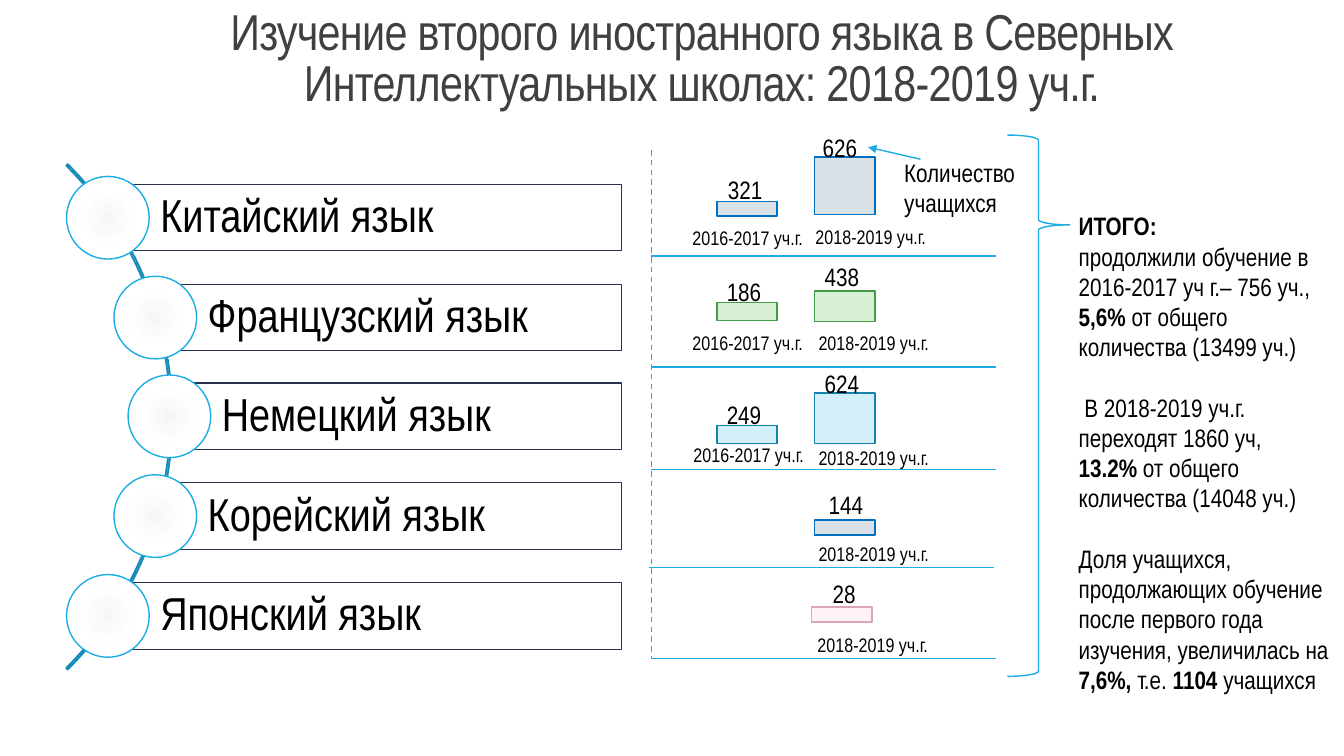
import pptx
import pptx.util
import pptx.oxml
import pptx.dml.color
import pptx.enum.dml
import pptx.enum.shapes
import pptx.enum.text
from dataclasses import dataclass

# Content
TITLE = ("Изучение второго иностранного языка в Северных "
         "Интеллектуальных школах: 2018-2019 уч.г.")
NOTE = "Количество учащихся"
OLD, NEW = "2016-2017 уч.г.", "2018-2019 уч.г."

# Language, circle left
LANGS = [("Китайский язык", 66), ("Французский язык", 113),
         ("Немецкий язык", 127), ("Корейский язык", 113),
         ("Японский язык", 66)]

# Tint, then bars: value, bar (left, top, height), value spot, year, year spot
BARS = [
    ("blue", [("321", (711, 200, 14), (712, 168), OLD, (677, 219)),
              ("626", (808, 156, 57), (806, 126), NEW, (799, 218))]),
    ("green", [("186", (711, 300, 18), (711, 269), OLD, (677, 323)),
               ("438", (808, 289, 30), (808, 254), NEW, (802, 323))]),
    ("sky", [("249", (711, 422, 18), (711, 391), OLD, (678, 434)),
             ("624", (808, 390, 50), (808, 361), NEW, (802, 437))]),
    ("blue", [("144", (808, 516, 15), (812, 481), NEW, (802, 533))]),
    ("pink", [("28", (805, 602, 15), (816, 569), NEW, (801, 623))]),
]

# Left and y of the row rules
RULES = [(646, 254), (646, 364), (646, 466), (644, 563), (646, 653)]

# Paragraphs: gap before in points, then (text, bold) runs
TOTAL = [
    (0, [("ИТОГО:", True)]),
    (0, [("продолжили обучение в 2016-2017 уч г.– 756 уч.,", False)]),
    (0, [("5,6% ", True), ("от общего количества (13499 уч.)", False)]),
    (21.6, [(" В 2018-2019 уч.г. переходят 1860 уч,", False)]),
    (0, [("13.2%", True), (" от общего количества (14048 уч.)", False)]),
    (21.6, [("Доля учащихся, продолжающих обучение после первого года "
             "изучения, увеличилась на ", False), ("7,6%, ", True),
            ("т.е. ", False), ("1104 ", True), ("учащихся", False)]),
]


@dataclass(frozen=True)
class Theme:
    face: str = "Arial Narrow"
    head: int = 36
    lang: int = 33
    body: int = 18
    year: int = 14
    title: str = "404040"
    ink: str = "000000"
    white: str = "FFFFFF"
    frame: str = "27304E"
    accent: str = "1CADE4"
    arc: str = "168BB7"
    blue: tuple = ("D9E0E6", "0070C0")
    green: tuple = ("D7F0D4", "439B45")
    sky: tuple = ("D2EFFA", "1482AC")
    pink: tuple = ("FFF3F7", "DEA6B2")


T = Theme()
PX = 9144  # 100 px to the inch
Kind = pptx.enum.shapes.MSO_SHAPE
Auto = pptx.enum.text.MSO_AUTO_SIZE
Anchor = pptx.enum.text.MSO_ANCHOR
Align = pptx.enum.text.PP_ALIGN
NS = 'xmlns:a="http://schemas.openxmlformats.org/drawingml/2006/main"'
GLOW = (f'<a:gradFill {NS} rotWithShape="1"><a:gsLst>'
        '<a:gs pos="0"><a:srgbClr val="F6F6F6"/></a:gs>'
        '<a:gs pos="45000"><a:srgbClr val="FEFEFE"/></a:gs>'
        '<a:gs pos="100000"><a:srgbClr val="FFFFFF"/></a:gs></a:gsLst>'
        '<a:path path="circle"><a:fillToRect l="50000" t="50000" '
        'r="50000" b="50000"/></a:path></a:gradFill>')

deck = pptx.Presentation()
deck.slide_width, deck.slide_height = 1333 * PX, 750 * PX
slide = deck.slides.add_slide(deck.slide_layouts[5])
shapes = slide.shapes


def rgb(code):
    return pptx.dml.color.RGBColor.from_string(code)


def style(par, size, color=T.ink):
    par.font.name = T.face
    par.font.size = pptx.util.Pt(size)
    par.font.color.rgb = rgb(color)


def shape(kind, box, fill, line, width, adjust=()):
    item = shapes.add_shape(kind, *(v * PX for v in box))
    item.shadow.inherit = False
    if fill:
        item.fill.solid()
        item.fill.fore_color.rgb = rgb(fill)
    else:
        item.fill.background()
    item.line.color.rgb = rgb(line)
    item.line.width = pptx.util.Pt(width)
    for i, value in enumerate(adjust):
        item.adjustments[i] = value
    return item


def label(text, box, size, wrap=True):
    frame = shapes.add_textbox(*(v * PX for v in box)).text_frame
    frame.word_wrap = wrap
    frame.auto_size = Auto.SHAPE_TO_FIT_TEXT
    frame.text = text
    style(frame.paragraphs[0], size)
    return frame


def rule(x1, y1, x2, y2):
    item = shapes.add_connector(pptx.enum.shapes.MSO_CONNECTOR.STRAIGHT,
                                x1 * PX, y1 * PX, x2 * PX, y2 * PX)
    item.line.color.rgb = rgb(T.accent)
    item.line.width = pptx.util.Pt(1)
    item._element.spPr.append(pptx.oxml.parse_xml(f"<a:effectLst {NS}/>"))
    return item


# Title
head = shapes.title
head.left, head.top, head.width, head.height = (
    v * PX for v in (146, 30, 1100, 86))
frame = head.text_frame
frame.text = TITLE
frame.word_wrap = True
frame.auto_size = Auto.NONE
frame.vertical_anchor = Anchor.BOTTOM
par = frame.paragraphs[0]
par.alignment = Align.CENTER
par.line_spacing = 0.85
style(par, T.head, T.title)
par.runs[0].font._element.set("spc", "-50")

# Languages along the arc
shape(Kind.BLOCK_ARC, (-538, 59, 709, 709), None, T.arc, 1.25,
      (189, 27, 0.003))
for i, (name, left) in enumerate(LANGS):
    top = round(183 + 98.75 * i)
    edge = left + 41
    bar = shape(Kind.RECTANGLE, (edge, top, 616 - edge, 66),
                T.white, T.frame, 0.75)
    frame = bar.text_frame
    frame.text = name
    frame.word_wrap = True
    frame.vertical_anchor = Anchor.MIDDLE
    frame.margin_left = 52 * PX
    frame.margin_top = frame.margin_right = frame.margin_bottom = 9 * PX
    par = frame.paragraphs[0]
    par.alignment = Align.LEFT
    par.line_spacing = 0.9
    style(par, T.lang)
    disc = shape(Kind.OVAL, (left, top - 8, 82, 82), T.white, T.accent, 1)
    props = disc._element.spPr
    solid = props.find(pptx.oxml.ns.qn("a:solidFill"))
    props.replace(solid, pptx.oxml.parse_xml(GLOW))

# Brace and totals
shape(Kind.RIGHT_BRACE, (999, 134, 62, 537), None, T.accent, 1,
      (0.083, 0.166))
frame = label("", (1060, 204, 272, 495), T.body)
for i, (gap, runs) in enumerate(TOTAL):
    par = frame.add_paragraph() if i else frame.paragraphs[0]
    par.space_before = pptx.util.Pt(gap)
    style(par, T.body)
    for text, bold in runs:
        run = par.add_run()
        run.text = text
        run.font.bold = bold

# Rules between rows
axis = rule(646, 149, 646, 653)
axis.line.dash_style = pptx.enum.dml.MSO_LINE.DASH
for left, y in RULES:
    rule(left, y, left + 342, y)

# Bars with counts and years
for tint, bars in BARS:
    fill, line = getattr(T, tint)
    for count, (left, top, high), spot, year, foot in bars:
        shape(Kind.RECTANGLE, (left, top, 60, high), fill, line, 1.25)
        label(count, (*spot, 43 if len(count) < 3 else 55, 40),
              T.body, False)
        label(year, (*foot, 133, 34), T.year, False)

# Note with arrow
label(NOTE, (887, 151, 143, 71), T.body)
arrow = rule(913, 158, 861, 146)
arrow.line._get_or_add_ln().append(
    pptx.oxml.parse_xml(f'<a:tailEnd {NS} type="triangle"/>'))

deck.save("out.pptx")
